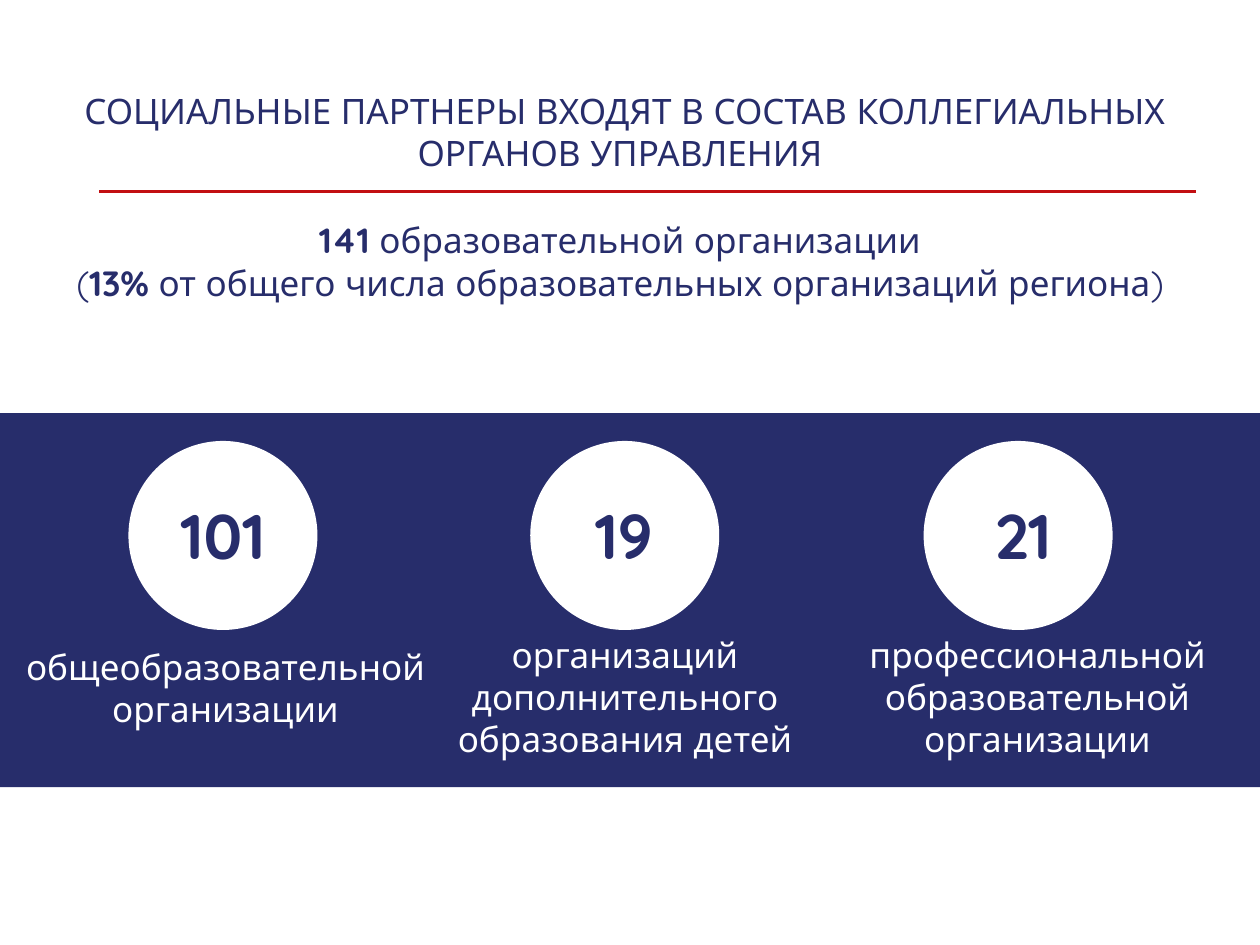
from pptx import Presentation
from pptx.dml.color import RGBColor
from pptx.enum.shapes import MSO_CONNECTOR, MSO_SHAPE
from pptx.enum.text import MSO_ANCHOR, MSO_AUTO_SIZE, PP_ALIGN
from pptx.oxml.ns import qn
from pptx.util import Cm, Pt
from lxml.etree import SubElement

THEME = {
    "font": "Quicksand",
    "navy": RGBColor(0x27, 0x2D, 0x6B),
    "red": RGBColor(0xC2, 0x0F, 0x12),
    "white": RGBColor(0xFF, 0xFF, 0xFF),
    "body": Pt(20),
    "number": Pt(36),
}

# Each paragraph is a list of (text, bold) runs.
TITLE = [[("СОЦИАЛЬНЫЕ ПАРТНЕРЫ ВХОДЯТ В СОСТАВ КОЛЛЕГИАЛЬНЫХ ОРГАНОВ УПРАВЛЕНИЯ ", False)]]
SUMMARY = [
    [("141 ", True), ("образовательной организации ", False)],
    [("(", False), ("13%", True),
     (" от общего числа образовательных организаций региона) ", False)],
]
# number, caption, circle left, number left, caption box (cm)
GROUPS = [
    ("101", "общеобразовательной организации", 2.59, 2.82, (0, 12.88, 9.09, 1.96)),
    ("19", "организаций дополнительного образования детей", 10.69, 10.9,
     (8.36, 12.65, 8.48, 2.82)),
    ("21", "профессиональной образовательной организации", 18.62, 18.95,
     (16.84, 12.65, 8.15, 2.82)),
]

SLIDE_W, SLIDE_H = 25.4, 19.05
HEAD_LEFT, HEAD_W = 1.09, 23.01
BAND_TOP, BAND_H = 8.33, 7.54
CIRCLE_TOP, CIRCLE_D = 8.89, 3.81
NUMBER_TOP, NUMBER_W, NUMBER_H = 9.88, 3.35, 1.8


def write(sp, paragraphs, size, color):
    tf = sp.text_frame
    tf.word_wrap = True
    tf.auto_size = MSO_AUTO_SIZE.SHAPE_TO_FIT_TEXT
    tf.vertical_anchor = MSO_ANCHOR.TOP
    for i, runs in enumerate(paragraphs):
        p = tf.add_paragraph() if i else tf.paragraphs[0]
        p.alignment = PP_ALIGN.CENTER
        p.line_spacing = 1.0
        for text, bold in runs:
            r = p.add_run()
            r.text = text
            r.font.name = THEME["font"]
            r.font.size = size
            r.font.bold = bold
            r.font.color.rgb = color


def add_text(slide, box, paragraphs, size, color):
    sp = slide.shapes.add_textbox(*map(Cm, box))
    write(sp, paragraphs, size, color)


def add_filled(slide, kind, box, color):
    sp = slide.shapes.add_shape(kind, *map(Cm, box))
    sp.shadow.inherit = False
    sp.fill.solid()
    sp.fill.fore_color.rgb = color
    sp.line.fill.background()


def add_rule(slide, left, right, y):
    line = slide.shapes.add_connector(
        MSO_CONNECTOR.STRAIGHT, Cm(left), Cm(y), Cm(right), Cm(y))
    line.line.color.rgb = THEME["red"]
    line.line.width = Pt(1.5)
    SubElement(line._element.spPr, qn("a:effectLst"))


def main():
    prs = Presentation()
    prs.slide_width, prs.slide_height = Cm(SLIDE_W), Cm(SLIDE_H)
    slide = prs.slides.add_slide(prs.slide_layouts[5])

    title = slide.shapes.title
    title.left, title.top = Cm(HEAD_LEFT), Cm(1.68)
    title.width, title.height = Cm(HEAD_W), Cm(1.96)
    write(title, TITLE, THEME["body"], THEME["navy"])
    add_rule(slide, 2, 24.1, 3.86)
    add_text(slide, (HEAD_LEFT, 4.29, HEAD_W, 2.82), SUMMARY,
             THEME["body"], THEME["navy"])

    add_filled(slide, MSO_SHAPE.RECTANGLE, (0, BAND_TOP, SLIDE_W, BAND_H), THEME["navy"])
    for number, caption, circle_left, number_left, caption_box in GROUPS:
        add_filled(slide, MSO_SHAPE.OVAL,
                   (circle_left, CIRCLE_TOP, CIRCLE_D, CIRCLE_D), THEME["white"])
        add_text(slide, (number_left, NUMBER_TOP, NUMBER_W, NUMBER_H),
                 [[(number, True)]], THEME["number"], THEME["navy"])
        add_text(slide, caption_box, [[(caption, False)]], THEME["body"], THEME["white"])

    prs.save("out.pptx")


if __name__ == "__main__":
    main()
